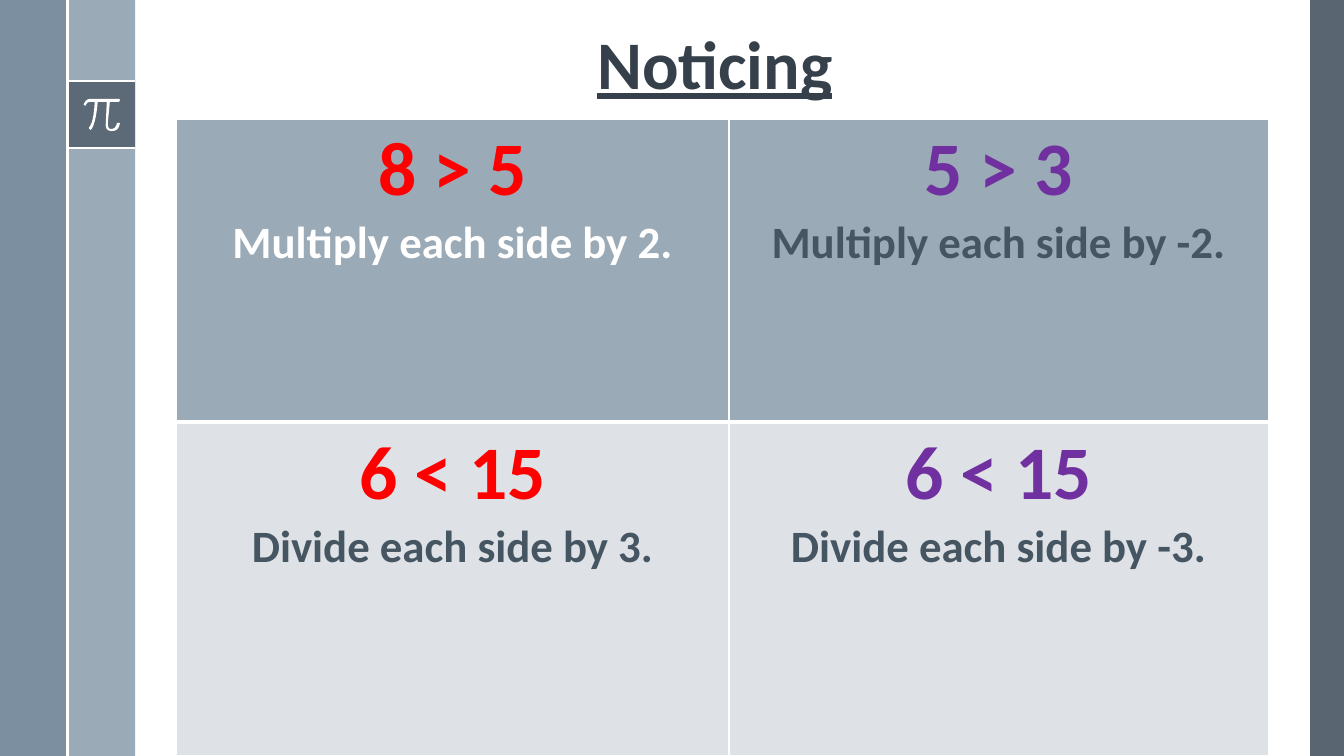
from lxml import etree
from pptx import Presentation
from pptx.dml.color import RGBColor
from pptx.enum.shapes import MSO_CONNECTOR, MSO_SHAPE
from pptx.enum.text import MSO_ANCHOR, PP_ALIGN
from pptx.oxml.ns import qn
from pptx.util import Inches, Pt

# Colours and font
FONT = "Calibri"
WHITE, RED, PURPLE = "FFFFFF", "FF0000", "7030A0"
INK, SLATE, DARK = "35404A", "465562", "475562"
STEEL, MIST, PALE = "6A8093", "9BAAB7", "DEE2E6"

# Content
TITLE = "Noticing"
COLUMN_ACCENTS = [RED, PURPLE]
# Each row: fill, bottom border, then (inequality, instruction, its colour)
TABLE_ROWS = [
    (MIST, 3, [("8 > 5", "Multiply each side by 2.", WHITE),
               ("5 > 3", "Multiply each side by -2.", SLATE)]),
    (PALE, 1, [("6 < 15", "Divide each side by 3.", SLATE),
               ("6 < 15", "Divide each side by -3.", SLATE)]),
]

# Layout in inches
WIDTH, HEIGHT = 13.33, 7.5
STRIP = 0.67                    # width of each left band, side of the badge
BADGE_TOP = 0.8
BADGE_BOTTOM = BADGE_TOP + STRIP
TITLE_BOX = (1.74, 0.19, 10.7, 0.89)
TABLE_LEFT, TABLE_TOP = 1.75, 1.18
COLUMN_WIDTHS = [5.48, 5.35]
ROW_HEIGHTS = [3.01, HEIGHT - TABLE_TOP - 3.01]

# left, top, width, height, colour, opacity in percent
PANELS = [
    (WIDTH - STRIP / 2, 0, STRIP / 2, HEIGHT, DARK, 90),
    (STRIP, 0, STRIP, HEIGHT, MIST, 100),
    (0, 0, STRIP, HEIGHT, STEEL, 88),
    (STRIP, BADGE_TOP, STRIP, STRIP, DARK, 75),
]
RULES = [(STRIP, y, 2 * STRIP, y) for y in (BADGE_TOP, BADGE_BOTTOM)]
RULES.append((STRIP, 0, STRIP, HEIGHT))

# Pi sign in hundredths of an inch, drawn stroke by stroke.
# One point is the end of a line; two are the bend and the end of a curve.
PI_START = (118, 98)
PI_STROKES = {
    "bar top": [[(90, 98)]],
    "bar flick": [[(85, 98), (83, 104)], [(85, 105)],
                  [(86, 101), (90, 101)], [(94, 101)]],
    "left leg": [[(93, 122), (88, 127)], [(90, 129)],
                 [(95, 124), (97, 101)]],
    "bar underside": [[(106, 101)]],
    "right leg": [[(105, 122)], [(104, 130), (111, 130)],
                  [(118, 130), (119, 122)], [(116, 122)],
                  [(115, 128), (110, 128)], [(107, 128), (107, 122)],
                  [(109, 101)]],
    "bar end": [[(118, 101)], [(120, 99), (118, 98)]],
}
PI_FINENESS = 10                # freeform points are whole numbers
CURVE_STEPS = 8


def color(hex_code):
    return RGBColor.from_string(hex_code)


def paint(shape, hex_code, opacity=100):
    shape.shadow.inherit = False
    shape.line.fill.background()
    shape.fill.solid()
    shape.fill.fore_color.rgb = color(hex_code)
    if opacity < 100:
        tint = shape.fill._xPr.find(".//" + qn("a:srgbClr"))
        etree.SubElement(tint, qn("a:alpha"), val=str(opacity * 1000))


def write(paragraph, text, size, hex_code, underline=None):
    paragraph.alignment = PP_ALIGN.CENTER
    run = paragraph.add_run()
    run.text = text
    font = run.font
    font.name, font.size, font.bold = FONT, Pt(size), True
    font.underline = underline
    font.color.rgb = color(hex_code)


def border(cell, bottom_width):
    properties = cell._tc.get_or_add_tcPr()
    sides = {"lnL": 1, "lnR": 1, "lnT": 1, "lnB": bottom_width}
    for place, (side, width) in enumerate(sides.items()):
        edge = etree.Element(qn("a:" + side), w=str(Pt(width)))
        fill = etree.SubElement(edge, qn("a:solidFill"))
        etree.SubElement(fill, qn("a:srgbClr"), val=WHITE)
        properties.insert(place, edge)


def curve(start, bend, end):
    """Points along a quadratic curve, without its start."""
    shares = [step / CURVE_STEPS for step in range(1, CURVE_STEPS + 1)]
    return [tuple(a * (1 - t) ** 2 + 2 * b * t * (1 - t) + c * t ** 2
                  for a, b, c in zip(start, bend, end)) for t in shares]


def trace(start, strokes):
    points = [start]
    for segments in strokes.values():
        for *bend, end in segments:
            points += curve(points[-1], bend[0], end) if bend else [end]
    return points


prs = Presentation()
prs.slide_width, prs.slide_height = Inches(WIDTH), Inches(HEIGHT)
shapes = prs.slides.add_slide(prs.slide_layouts[6]).shapes

# Side panels and badge
for *box, hex_code, opacity in PANELS:
    panel = shapes.add_shape(MSO_SHAPE.RECTANGLE, *map(Inches, box))
    paint(panel, hex_code, opacity)

# White rules
for ends in RULES:
    rule = shapes.add_connector(MSO_CONNECTOR.STRAIGHT, *map(Inches, ends))
    rule.line.color.rgb = color(WHITE)
    rule.line.width = Pt(1.5)
    etree.SubElement(rule._element.spPr, qn("a:effectLst"))

# Pi sign
pi_start, *pi_points = [(x * PI_FINENESS, y * PI_FINENESS)
                        for x, y in trace(PI_START, PI_STROKES)]
pi_outline = shapes.build_freeform(
    *pi_start, scale=Inches(1) / (100 * PI_FINENESS))
pi_outline.add_line_segments(pi_points, close=True)
paint(pi_outline.convert_to_shape(), WHITE)

# Title
title = shapes.add_textbox(*map(Inches, TITLE_BOX)).text_frame
title.word_wrap = True
title.vertical_anchor = MSO_ANCHOR.BOTTOM
title.paragraphs[0].line_spacing = 0.9
write(title.paragraphs[0], TITLE, 48.6, INK, underline=True)

# Table of inequalities
inequalities = shapes.add_table(
    len(ROW_HEIGHTS), len(COLUMN_WIDTHS), Inches(TABLE_LEFT),
    Inches(TABLE_TOP), Inches(sum(COLUMN_WIDTHS)),
    Inches(sum(ROW_HEIGHTS))).table
inequalities.horz_banding = False
for column, width in zip(inequalities.columns, COLUMN_WIDTHS):
    column.width = Inches(width)
for row, height, (fill, bottom_width, entries) in zip(
        inequalities.rows, ROW_HEIGHTS, TABLE_ROWS):
    row.height = Inches(height)
    for cell, accent, (inequality, instruction, ink) in zip(
            row.cells, COLUMN_ACCENTS, entries):
        cell.fill.solid()
        cell.fill.fore_color.rgb = color(fill)
        border(cell, bottom_width)
        write(cell.text_frame.paragraphs[0], inequality, 54, accent)
        write(cell.text_frame.add_paragraph(), instruction, 32, ink)

prs.save("out.pptx")
